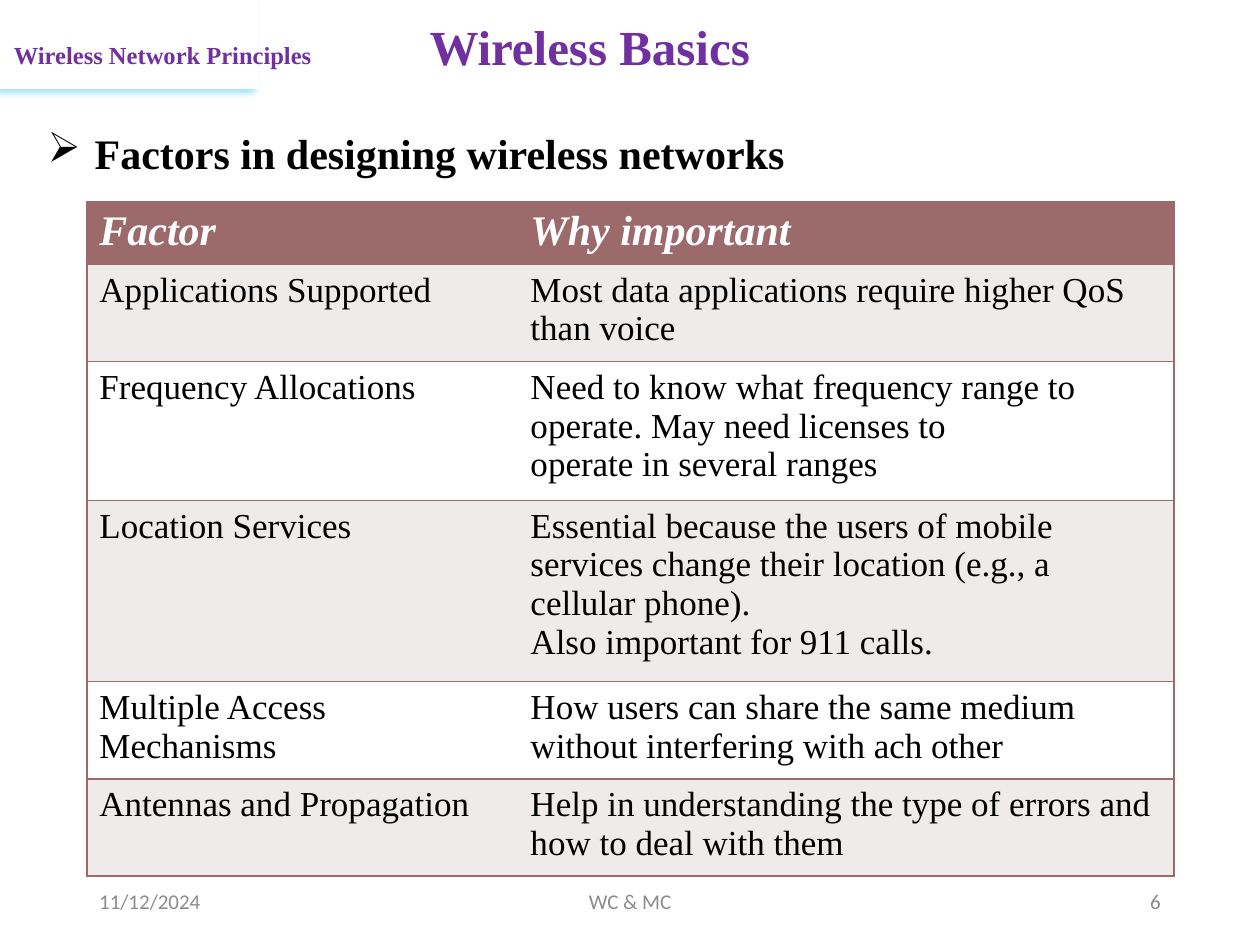
"""Build the slide on factors in designing wireless networks."""
from dataclasses import dataclass

from lxml.etree import SubElement
from pptx import Presentation
from pptx.dml.color import RGBColor as Rgb
from pptx.enum.shapes import MSO_SHAPE as Shape
from pptx.enum.text import MSO_ANCHOR as Anchor, PP_ALIGN as Align
from pptx.oxml.ns import qn
from pptx.util import Cm, Pt


@dataclass(frozen=True)
class Theme:
    """Hold the colours and type styles of the slide."""
    serif: str = "Times New Roman"
    sans: str = "Calibri"
    purple: str = "7030A0"
    black: str = "000000"
    white: str = "FFFFFF"
    grey: str = "8C8C8C"
    rose: str = "9C6A6A"
    band: str = "EFEBEB"
    glow: str = "00B0F0"

    def style(self, size, color, name=None, bold=False, italic=False):
        """Return the format values of one type style."""
        return {"size": Pt(size), "name": name or self.serif, "bold": bold,
                "italic": italic, "color": Rgb.from_string(color)}


THEME = Theme()
TITLE = THEME.style(28, THEME.purple, bold=True)
SECTION = THEME.style(14, THEME.purple, bold=True)
HEADING = THEME.style(24, THEME.black, bold=True)
TABLE_HEAD = THEME.style(24, THEME.white, bold=True, italic=True)
TABLE_BODY = THEME.style(20, THEME.black)
FOOTER = THEME.style(12, THEME.grey, THEME.sans)

FACTORS = [
    ("Factor", "Why important"),
    ("Applications Supported",
     "Most data applications require higher QoS than voice"),
    ("Frequency Allocations",
     "Need to know what frequency range to operate. May need licenses to\n"
     "operate in several ranges"),
    ("Location Services",
     "Essential because the users of mobile services change their location "
     "(e.g., a cellular phone).\nAlso important for 911 calls."),
    ("Multiple Access Mechanisms",
     "How users can share the same medium without interfering with ach other"),
    ("Antennas and Propagation",
     "Help in understanding the type of errors and how to deal with them"),
]
COLUMN_WIDTHS = (8.69, 13.23)
ROW_HEIGHTS = (1.27, 1.96, 2.8, 3.65, 1.96, 1.96)
NO_TABLE_STYLE = "{2D5ABB26-0587-4C30-8999-92F81FD0307C}"


def write_text(frame, text, style):
    """Fill a text frame with one styled paragraph for each line."""
    frame.text = text
    for para in frame.paragraphs:
        for span in para.runs:
            for key, value in style.items():
                if key == "color":
                    span.font.color.rgb = value
                else:
                    setattr(span.font, key, value)


def add_text(page, place, text, style, align=Align.LEFT, anchor=Anchor.TOP):
    """Add a wrapping text box and return its first paragraph."""
    box = page.shapes.add_textbox(*map(Cm, place))
    frame = box.text_frame
    for key, value in {"word_wrap": True, "vertical_anchor": anchor}.items():
        setattr(frame, key, value)
    write_text(frame, text, style)
    para = frame.paragraphs[0]
    para.alignment = align
    return para


def add_bullet(para, mark, indent):
    """Give a paragraph a hanging bullet."""
    props = para._p.get_or_add_pPr()
    props.set("marL", str(Cm(indent)))
    props.set("indent", str(-Cm(indent)))
    SubElement(props, qn("a:buChar"), char=mark)


def add_corner_panel(page):
    """Add the white corner panel with its blue shadow."""
    panel = page.shapes.add_shape(Shape.RECTANGLE, 0, 0, Cm(5.21), Cm(1.8))
    panel.fill.solid()
    panel.fill.fore_color.rgb = Rgb.from_string(THEME.white)
    panel.line.fill.background()
    effects = SubElement(panel._element.spPr, qn("a:effectLst"))
    shadow = SubElement(effects, qn("a:outerShdw"), blurRad=str(Pt(4)),
                        dist=str(Pt(3)), dir="8100000", rotWithShape="0")
    color = SubElement(shadow, qn("a:srgbClr"), val=THEME.glow)
    SubElement(color, qn("a:alpha"), val="40000")


def add_borders(cell, sides):
    """Draw thin rose lines on the named sides of a cell."""
    props = cell._tc.get_or_add_tcPr()
    for side in sides:
        line = SubElement(props, qn(f"a:ln{side}"), w=str(Pt(1)))
        fill = SubElement(line, qn("a:solidFill"))
        SubElement(fill, qn("a:srgbClr"), val=THEME.rose)


def add_factor_table(page):
    """Add the banded table of design factors."""
    frame = page.shapes.add_table(
        len(FACTORS), len(COLUMN_WIDTHS), Cm(1.75), Cm(4.06),
        Cm(sum(COLUMN_WIDTHS)), Cm(sum(ROW_HEIGHTS)))
    table = frame.table
    table._tbl.tblPr.find(qn("a:tableStyleId")).text = NO_TABLE_STYLE
    for column, width in zip(table.columns, COLUMN_WIDTHS):
        column.width = Cm(width)
    for index, (row, height) in enumerate(zip(table.rows, ROW_HEIGHTS)):
        row.height = Cm(height)
        style = TABLE_BODY if index else TABLE_HEAD
        band = THEME.band if index % 2 else THEME.white
        for cell, text, edge in zip(row.cells, FACTORS[index], "LR"):
            write_text(cell.text_frame, text, style)
            add_borders(cell, (edge, "T", "B"))
            cell.fill.solid()
            cell.fill.fore_color.rgb = Rgb.from_string(
                band if index else THEME.rose)


def add_footer(page):
    """Add the date, the course name and the page number."""
    for left, width, text, align in (
            (1.75, 5.72, "11/12/2024", Align.LEFT),
            (8.41, 8.59, "WC & MC", Align.CENTER),
            (17.93, 5.72, "6", Align.RIGHT)):
        add_text(page, (left, 17.65, width, 1.02), text, FOOTER, align,
                 Anchor.MIDDLE)


def main():
    """Build and save the deck."""
    deck = Presentation()
    deck.slide_width, deck.slide_height = Cm(25.4), Cm(19.05)
    page = deck.slides.add_slide(deck.slide_layouts[6])
    add_corner_panel(page)
    add_text(page, (8.41, 0.2, 16.99, 1.45), "Wireless Basics", TITLE)
    add_text(page, (0.03, 0.69, 7.9, 0.86), "Wireless Network Principles",
             SECTION)
    heading = add_text(page, (0.71, 2.44, 23.32, 2.31),
                       "Factors in designing wireless networks", HEADING)
    add_bullet(heading, "➢", 0.95)
    add_factor_table(page)
    add_footer(page)
    deck.save("out.pptx")


if __name__ == "__main__":
    main()
